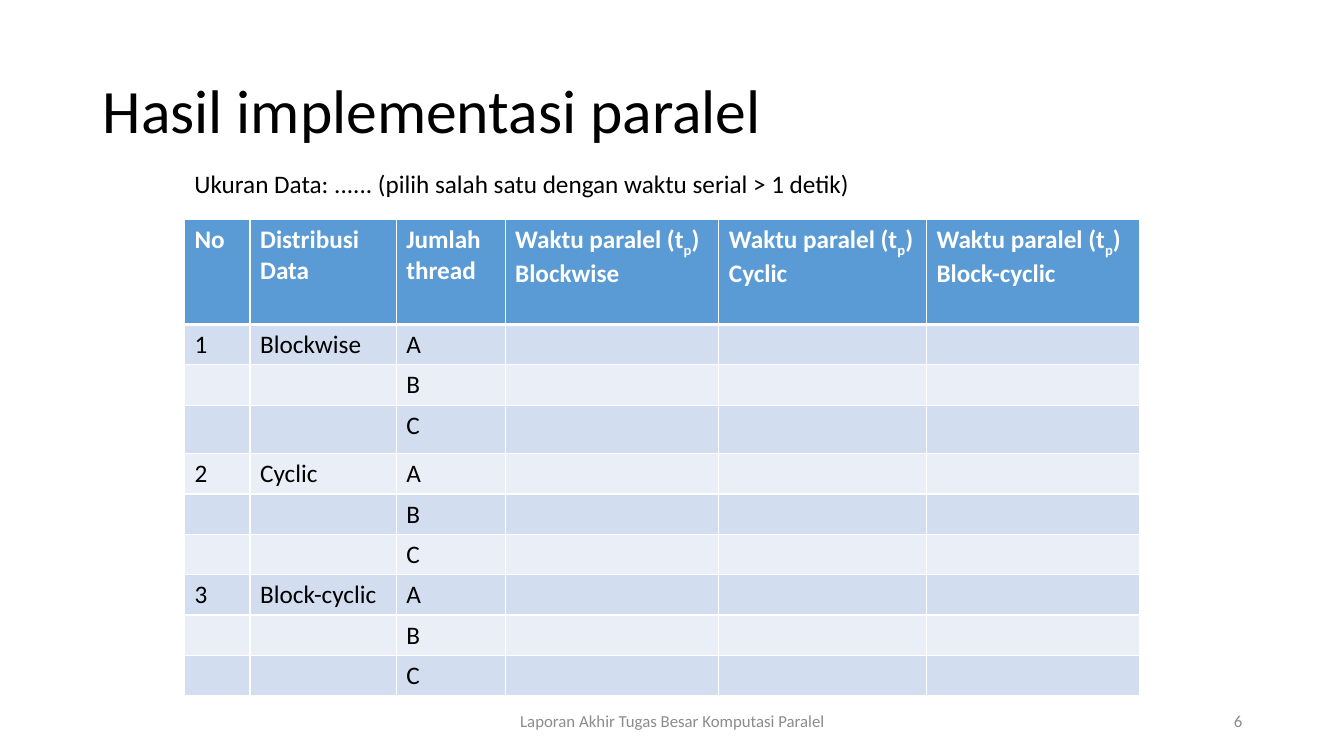
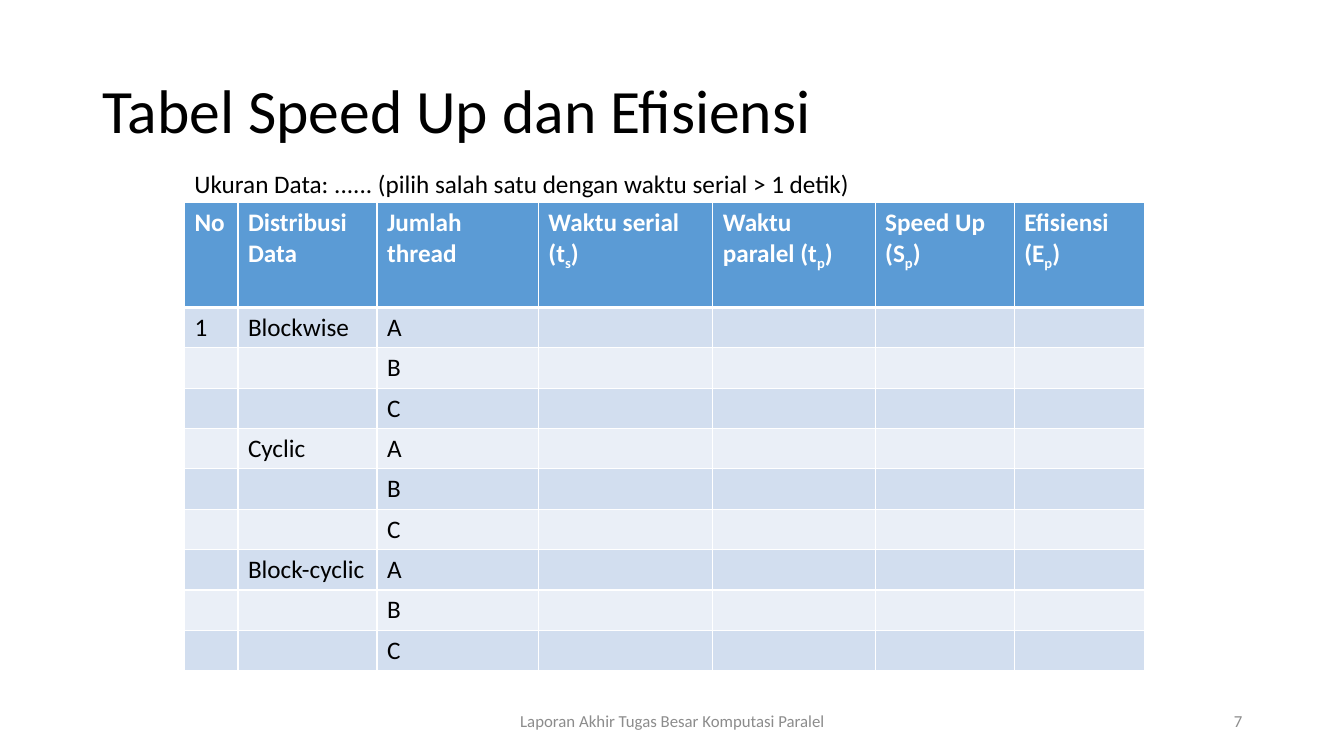
from pptx import Presentation
from pptx.dml.color import RGBColor
from pptx.enum.text import MSO_ANCHOR as Anchor, PP_ALIGN as Align
from pptx.oxml import parse_xml
from pptx.oxml.ns import nsdecls
from pptx.util import Inches, Pt

# Content
FOOTER = "Laporan Akhir Tugas Besar Komputasi Paralel"
DATA_SIZE = "Ukuran Data: ...... (pilih salah satu dengan waktu serial > 1 detik)"
DISTRIBUTIONS = ["Blockwise", "Cyclic", "Block-cyclic"]
THREADS = ["A", "B", "C"]

# In a heading, the letter after "_" is a subscript and a line break starts a paragraph
SLIDES = [
    {
        "title": "Hasil implementasi paralel",
        "page": 6,
        "headings": ["No", "Distribusi Data", "Jumlah thread"]
        + [f"Waktu paralel (t_p)\n{name}" for name in DISTRIBUTIONS],
        "numbers": ["1", "2", "3"],
        "table_top": 2.18,
        "widths": [0.65, 1.45, 1.08, 2.12, 2.06, 2.11],
        "tall_rows": {3: 0.48},
    },
    {
        "title": "Tabel Speed Up dan Efisiensi",
        "page": 7,
        "headings": ["No", "Distribusi Data", "Jumlah thread", "Waktu serial (t_s)",
                     "Waktu paralel (t_p)", "Speed Up (S_p)", "Efisiensi (E_p)"],
        "numbers": ["1", "", ""],
        "table_top": 2.01,
        "widths": [0.53, 1.38, 1.6, 1.73, 1.61, 1.38, 1.29],
        "tall_rows": {},
    },
]

# Theme
THEME = {
    "font": "Calibri",
    "white": "FFFFFF",
    "header": "5B9BD5",
    "bands": ["D2DEEF", "EAEFF7"],
    "rule": 1,
    "header_rule": 3,
    "title": {"size": 44, "color": "000000"},
    "body": {"size": 18, "color": "000000"},
    "heading": {"size": 18, "color": "FFFFFF", "bold": True},
    "footer": {"size": 12, "color": "8C8C8C"},
}
TABLE_LEFT = 1.83
HEADER_HEIGHT, ROW_HEIGHT = 1.04, 0.4


def write(para, text, style):
    """Add text to a paragraph, lowering each letter that follows "_"."""
    first, *rest = text.split("_")
    pieces = [(first, False)]
    for part in rest:
        pieces += [(part[0], True), (part[1:], False)]
    for piece, lowered in pieces:
        span = para.add_run()
        span.text = piece
        formats = {"name": THEME["font"], "size": Pt(style["size"]),
                   "bold": style.get("bold", False)}
        for name, value in formats.items():
            setattr(span.font, name, value)
        span.font.color.rgb = RGBColor.from_string(style["color"])
        if lowered:
            span.font._element.set("baseline", "-25000")


def add_text(page, place, text, style, **formats):
    box = page.shapes.add_textbox(*map(Inches, place))
    frame = box.text_frame
    frame.word_wrap = True
    frame.vertical_anchor = formats.pop("anchor", Anchor.MIDDLE)
    para = frame.paragraphs[0]
    for name, value in formats.items():
        setattr(para, name, value)
    write(para, text, style)


def set_borders(cell, **points):
    """Draw white cell borders; the lines must precede the fill."""
    props = cell._tc.get_or_add_tcPr()
    for index, side in enumerate("LRTB"):
        width = Pt(points.get(side, THEME["rule"]))
        props.insert(index, parse_xml(
            f'<a:ln{side} {nsdecls("a")} w="{width}"><a:solidFill>'
            f'<a:srgbClr val="{THEME["white"]}"/></a:solidFill></a:ln{side}>'))


def add_result_table(page, content):
    # Each distribution takes one row per thread count
    rows = [content["headings"]]
    for number, name in zip(content["numbers"], DISTRIBUTIONS):
        for index, thread in enumerate(THREADS):
            rows.append([number, name, thread] if index == 0 else ["", "", thread])

    widths = content["widths"]
    heights = [HEADER_HEIGHT] + [content["tall_rows"].get(index, ROW_HEIGHT)
                                 for index in range(1, len(rows))]
    place = (TABLE_LEFT, content["table_top"], sum(widths), sum(heights))
    table = page.shapes.add_table(len(rows), len(widths), *map(Inches, place)).table
    table.first_row = table.horz_banding = False
    for column, width in zip(table.columns, widths):
        column.width = Inches(width)

    for r, (row, height) in enumerate(zip(rows, heights)):
        table.rows[r].height = Inches(height)
        color = THEME["bands"][(r - 1) % 2] if r else THEME["header"]
        style = THEME["body"] if r else THEME["heading"]
        thick = {0: {"B": THEME["header_rule"]}, 1: {"T": THEME["header_rule"]}}
        for c in range(len(widths)):
            cell = table.cell(r, c)
            cell.fill.solid()
            cell.fill.fore_color.rgb = RGBColor.from_string(color)
            set_borders(cell, **thick.get(r, {}))
            text = row[c] if c < len(row) else ""
            if not text:
                continue
            frame = cell.text_frame
            for index, line in enumerate(text.split("\n")):
                para = frame.add_paragraph() if index else frame.paragraphs[0]
                write(para, line, style)


def add_page(deck, content):
    page = deck.slides.add_slide(deck.slide_layouts[6])
    add_text(page, (0.92, 0.4, 11.5, 1.45), content["title"], THEME["title"],
             line_spacing=0.9)
    add_result_table(page, content)
    add_text(page, (4.42, 6.95, 4.5, 0.4), FOOTER, THEME["footer"],
             alignment=Align.CENTER)
    add_text(page, (9.42, 6.95, 3, 0.4), str(content["page"]), THEME["footer"],
             alignment=Align.RIGHT)
    add_text(page, (TABLE_LEFT, 1.62, 8.57, 0.4), DATA_SIZE, THEME["body"],
             anchor=Anchor.TOP)


def main():
    deck = Presentation()
    deck.slide_width, deck.slide_height = Inches(13.33), Inches(7.5)
    for content in SLIDES:
        add_page(deck, content)
    deck.save("out.pptx")


if __name__ == "__main__":
    main()
